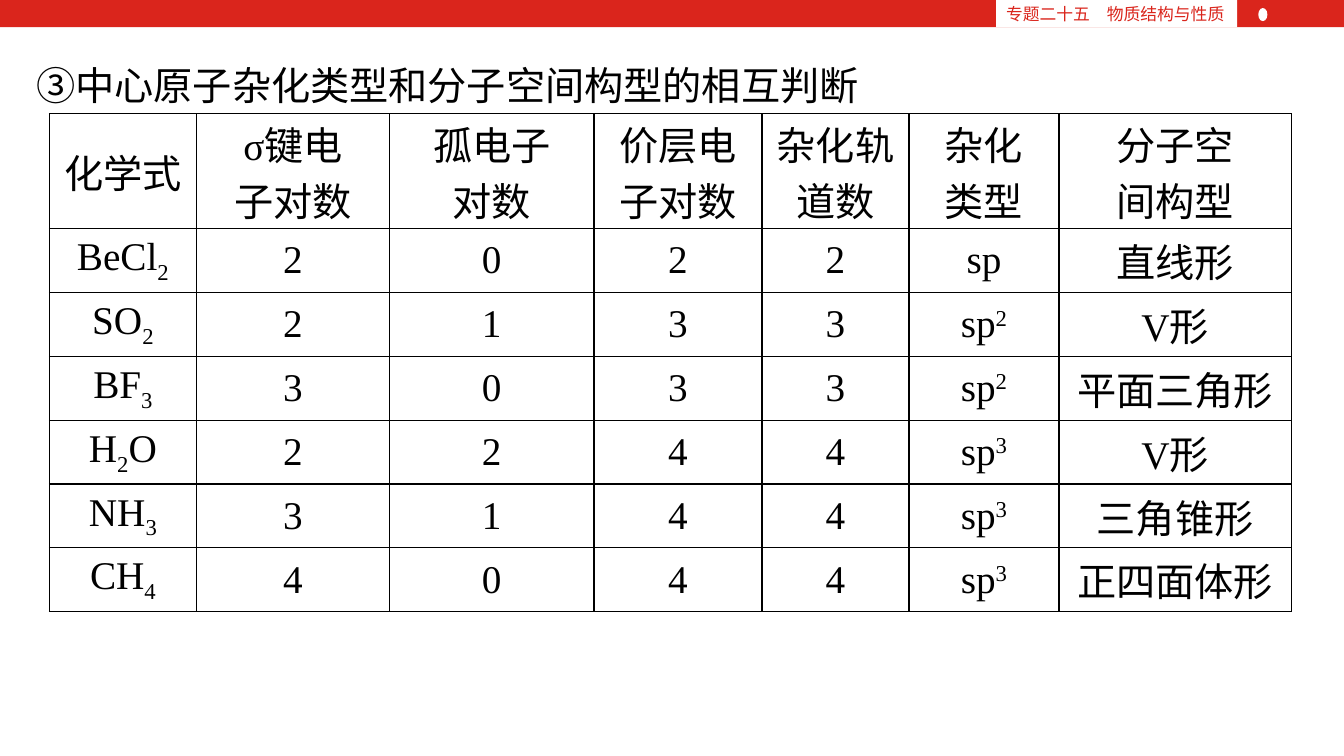
from itertools import groupby

from lxml import etree
from pptx import Presentation
from pptx.dml.color import RGBColor
from pptx.enum.shapes import MSO_SHAPE
from pptx.enum.text import MSO_ANCHOR, MSO_AUTO_SIZE, PP_ALIGN
from pptx.oxml.ns import qn
from pptx.util import Inches, Pt

RECTANGLE, OVAL = MSO_SHAPE.RECTANGLE, MSO_SHAPE.OVAL
TOP, MIDDLE = MSO_ANCHOR.TOP, MSO_ANCHOR.MIDDLE
LEFT, CENTER = PP_ALIGN.LEFT, PP_ALIGN.CENTER
NO_AUTOFIT = MSO_AUTO_SIZE.NONE

RED = RGBColor(0xDA, 0x25, 0x1C)
WHITE = RGBColor(0xFF, 0xFF, 0xFF)
BLACK = RGBColor(0x00, 0x00, 0x00)
FONT = "Times New Roman"

SUBSCRIPT, SUPERSCRIPT = -25000, 30000
DIGIT_BASELINES = {0: SUBSCRIPT, 5: SUPERSCRIPT}

BAR_HEIGHT = 0.27
TABLE_WIDTH, TABLE_HEIGHT, HEADER_HEIGHT = 12.32, 4.94, 1.14
COLUMN_SHARES = [1.46, 1.92, 2.03, 1.67, 1.46, 1.49, 2.31]
MOLECULE_TABLE = [
    ["化学式", "σ键电\n子对数", "孤电子\n对数", "价层电\n子对数",
     "杂化轨\n道数", "杂化\n类型", "分子空\n间构型"],
    ["BeCl2", "2", "0", "2", "2", "sp", "直线形"],
    ["SO2", "2", "1", "3", "3", "sp2", "V形"],
    ["BF3", "3", "0", "3", "3", "sp2", "平面三角形"],
    ["H2O", "2", "2", "4", "4", "sp3", "V形"],
    ["NH3", "3", "1", "4", "4", "sp3", "三角锥形"],
    ["CH4", "4", "0", "4", "4", "sp3", "正四面体形"],
]


def write_text(frame, text, size=28, color=BLACK, align=LEFT, anchor=MIDDLE,
               spacing=None, digit_baseline=None):
    frame.word_wrap = True
    frame.vertical_anchor = anchor
    for number, line in enumerate(text.split("\n")):
        paragraph = frame.add_paragraph() if number else frame.paragraphs[0]
        paragraph.alignment = align
        paragraph.line_spacing = spacing
        pieces = [(False, line)]
        if digit_baseline:
            pieces = [(is_digit, "".join(letters))
                      for is_digit, letters in groupby(line, str.isdigit)]
        for is_digit, piece in pieces:
            run = paragraph.add_run()
            run.text = piece
            run.font.size = Pt(size)
            run.font.name = FONT
            run.font.color.rgb = color
            if is_digit:
                run.font._element.set("baseline", str(digit_baseline))


def add_plain_shape(slide, preset, left, top, width, height, color):
    shape = slide.shapes.add_shape(preset, Inches(left), Inches(top),
                                   Inches(width), Inches(height))
    shape.shadow.inherit = False
    shape.fill.solid()
    shape.fill.fore_color.rgb = color
    shape.line.fill.background()
    return shape


def place_heading(slide, text):
    heading = slide.shapes.title
    heading.left, heading.top = Inches(0.26), Inches(0.32)
    heading.width, heading.height = Inches(12.82), Inches(0.72)
    heading.text_frame.auto_size = NO_AUTOFIT
    write_text(heading.text_frame, text, anchor=TOP, spacing=1.5)


def border_cell(cell):
    properties = cell._tc.get_or_add_tcPr()
    for side in ("lnL", "lnR", "lnT", "lnB"):
        edge = etree.SubElement(properties, qn(f"a:{side}"), w=str(Pt(1)))
        fill = etree.SubElement(edge, qn("a:solidFill"))
        etree.SubElement(fill, qn("a:srgbClr"), val=str(BLACK))


def fill_cell(cell, text, digit_baseline):
    cell.margin_left = cell.margin_right = Inches(0)
    cell.margin_top = cell.margin_bottom = Inches(0)
    border_cell(cell)
    cell.fill.solid()
    cell.fill.fore_color.rgb = WHITE
    write_text(cell.text_frame, text, align=CENTER, digit_baseline=digit_baseline)
    cell.vertical_anchor = MIDDLE


def add_molecule_table(slide, rows):
    molecule_count = len(rows) - 1
    molecule_height = (TABLE_HEIGHT - HEADER_HEIGHT) / molecule_count
    heights = [HEADER_HEIGHT] + [molecule_height] * molecule_count
    table = slide.shapes.add_table(
        len(rows), len(COLUMN_SHARES), Inches(0.49), Inches(1.13),
        Inches(TABLE_WIDTH), Inches(TABLE_HEIGHT)).table
    table.first_row = table.horz_banding = False
    for column, share in zip(table.columns, COLUMN_SHARES):
        column.width = Inches(TABLE_WIDTH * share / sum(COLUMN_SHARES))
    for row_index, (row, height) in enumerate(zip(rows, heights)):
        table.rows[row_index].height = Inches(height)
        for column_index, text in enumerate(row):
            fill_cell(table.cell(row_index, column_index), text,
                      DIGIT_BASELINES.get(column_index))


def main():
    presentation = Presentation()
    presentation.slide_width = Inches(13.33)
    presentation.slide_height = Inches(7.5)
    slide = presentation.slides.add_slide(presentation.slide_layouts[5])

    add_plain_shape(slide, RECTANGLE, 0, 0, 13.33, BAR_HEIGHT, RED)
    add_plain_shape(slide, OVAL, 12.48, 0.08, 0.09, 0.13, WHITE)
    place_heading(slide, "③中心原子杂化类型和分子空间构型的相互判断")
    topic_label = add_plain_shape(slide, RECTANGLE, 9.88, 0, 2.39, BAR_HEIGHT, WHITE)
    write_text(topic_label.text_frame, "专题二十五　物质结构与性质",
               size=12, color=RED)
    add_molecule_table(slide, MOLECULE_TABLE)

    presentation.save("out.pptx")


if __name__ == "__main__":
    main()
